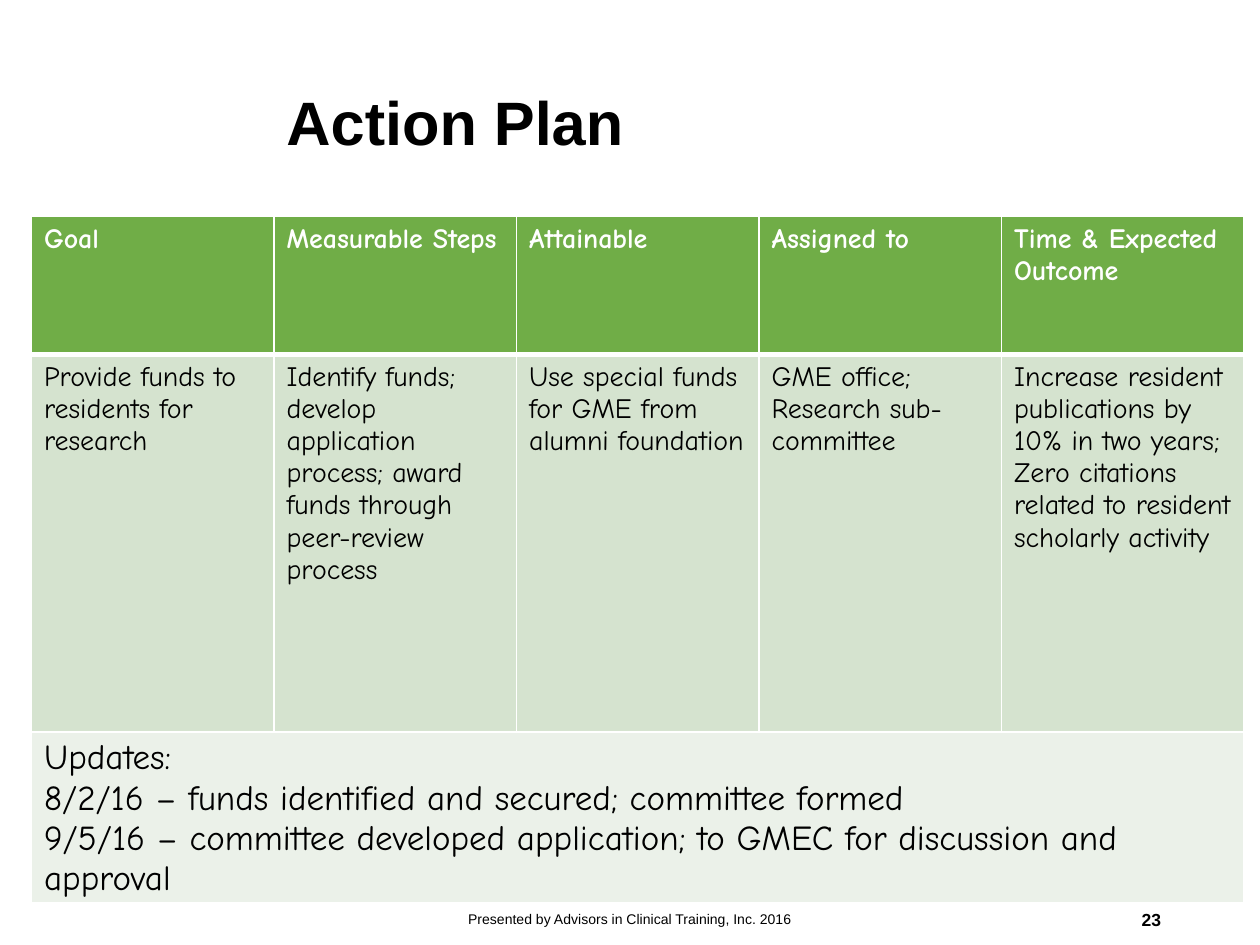
import pptx
import pptx.util
import pptx.dml.color
import pptx.enum.text
import pptx.oxml
import pptx.oxml.ns

Pt = pptx.util.Pt
RGBColor = pptx.dml.color.RGBColor
ALIGN = pptx.enum.text.PP_ALIGN
MIDDLE = pptx.enum.text.MSO_ANCHOR.MIDDLE

BLACK = RGBColor(0x00, 0x00, 0x00)
WHITE = RGBColor(0xFF, 0xFF, 0xFF)
GREEN = RGBColor(0x70, 0xAD, 0x47)
SAGE = RGBColor(0xD5, 0xE3, 0xCF)
PALE = RGBColor(0xEB, 0xF1, 0xE9)

TITLE = {"name": "Arial", "size": Pt(35), "bold": True}
FOOTER = {"name": "Arial", "size": Pt(8), "bold": False}
NUMBER = {"name": "Arial", "size": Pt(10), "bold": True}
HEADER = {"name": "Comic Neue", "size": Pt(16), "bold": True}
BODY = {"name": "Comic Neue", "size": Pt(16), "bold": False}
UPDATE = {"name": "Comic Neue", "size": Pt(20), "bold": False}

HEADINGS = ["Goal", "Measurable Steps", "Attainable", "Assigned to",
            "Time & Expected Outcome"]
PLAN = [
    "Provide funds to residents for research",
    "Identify funds; develop application process; award funds through "
    "peer-review process",
    "Use special funds for GME from alumni foundation",
    "GME office; Research sub-committee",
    "Increase resident publications by 10% in two years; Zero citations "
    "related to resident scholarly activity",
]
UPDATES = [
    "Updates:",
    "8/2/16 – funds identified and secured; committee formed",
    "9/5/16 – committee developed application; to GMEC for discussion "
    "and approval",
]


def write(tf, lines, style, color=BLACK, align=ALIGN.LEFT):
    for i, line in enumerate(lines):
        p = tf.paragraphs[0] if i == 0 else tf.add_paragraph()
        p.alignment = align
        r = p.add_run()
        r.text = line
        for name, value in style.items():
            setattr(r.font, name, value)
        r.font.color.rgb = color


def add_title(s, box, text):
    sp = s.shapes.title
    sp.left, sp.top, sp.width, sp.height = map(Pt, box)
    sp.text_frame.vertical_anchor = MIDDLE
    write(sp.text_frame, [text], TITLE)
    sp.text_frame.paragraphs[0].line_spacing = 0.9


def add_footer_text(s, box, text, style, align):
    tf = s.shapes.add_textbox(*map(Pt, box)).text_frame
    tf.word_wrap = True
    tf.vertical_anchor = MIDDLE
    write(tf, [text], style, align=align)


def set_borders(cell, bottom=1):
    tcPr = cell._tc.get_or_add_tcPr()
    widths = {"lnL": 1, "lnR": 1, "lnT": 1, "lnB": bottom}
    for i, (side, width) in enumerate(widths.items()):
        # Border lines come before the fill
        tcPr.insert(i, pptx.oxml.parse_xml(
            f'<a:{side} {pptx.oxml.ns.nsdecls("a")} w="{Pt(width)}">'
            f'<a:solidFill><a:srgbClr val="{WHITE}"/></a:solidFill>'
            f'</a:{side}>'))


def add_plan_table(s, box, heights):
    left, top, width = box
    count = len(HEADINGS)
    table = s.shapes.add_table(len(heights), count, Pt(left), Pt(top),
                               Pt(width), Pt(sum(heights))).table
    for column in table.columns:
        column.width = Pt(width / count)
    for row, height in zip(table.rows, heights):
        row.height = Pt(height)
    updates = table.cell(2, 0)
    updates.merge(table.cell(2, count - 1))
    # Four lines of updates fit the row without stretching it
    updates.margin_bottom = Pt(0)

    # Header, plan and merged updates rows
    rows = [([[t] for t in HEADINGS], HEADER, WHITE, GREEN, 3),
            ([[t] for t in PLAN], BODY, BLACK, SAGE, 1),
            ([UPDATES], UPDATE, BLACK, PALE, 1)]
    for i, (texts, style, color, fill, bottom) in enumerate(rows):
        for j, lines in enumerate(texts):
            cell = table.cell(i, j)
            cell.fill.solid()
            cell.fill.fore_color.rgb = fill
            set_borders(cell, bottom)
            write(cell.text_frame, lines, style, color)


def main():
    prs = pptx.Presentation()
    prs.slide_width, prs.slide_height = Pt(720), Pt(540)
    s = prs.slides.add_slide(prs.slide_layouts[5])

    add_title(s, (156.5, 19.5, 514, 104.5), "Action Plan")
    add_plan_table(s, (18, 123.75, 693), (79, 215.5, 97.5))
    add_footer_text(s, (238.5, 511, 243, 28.75),
                    "Presented by Advisors in Clinical Training, Inc. 2016",
                    FOOTER, ALIGN.CENTER)
    add_footer_text(s, (508.5, 511, 162, 28.75), "23", NUMBER, ALIGN.RIGHT)

    prs.save("out.pptx")


if __name__ == "__main__":
    main()
